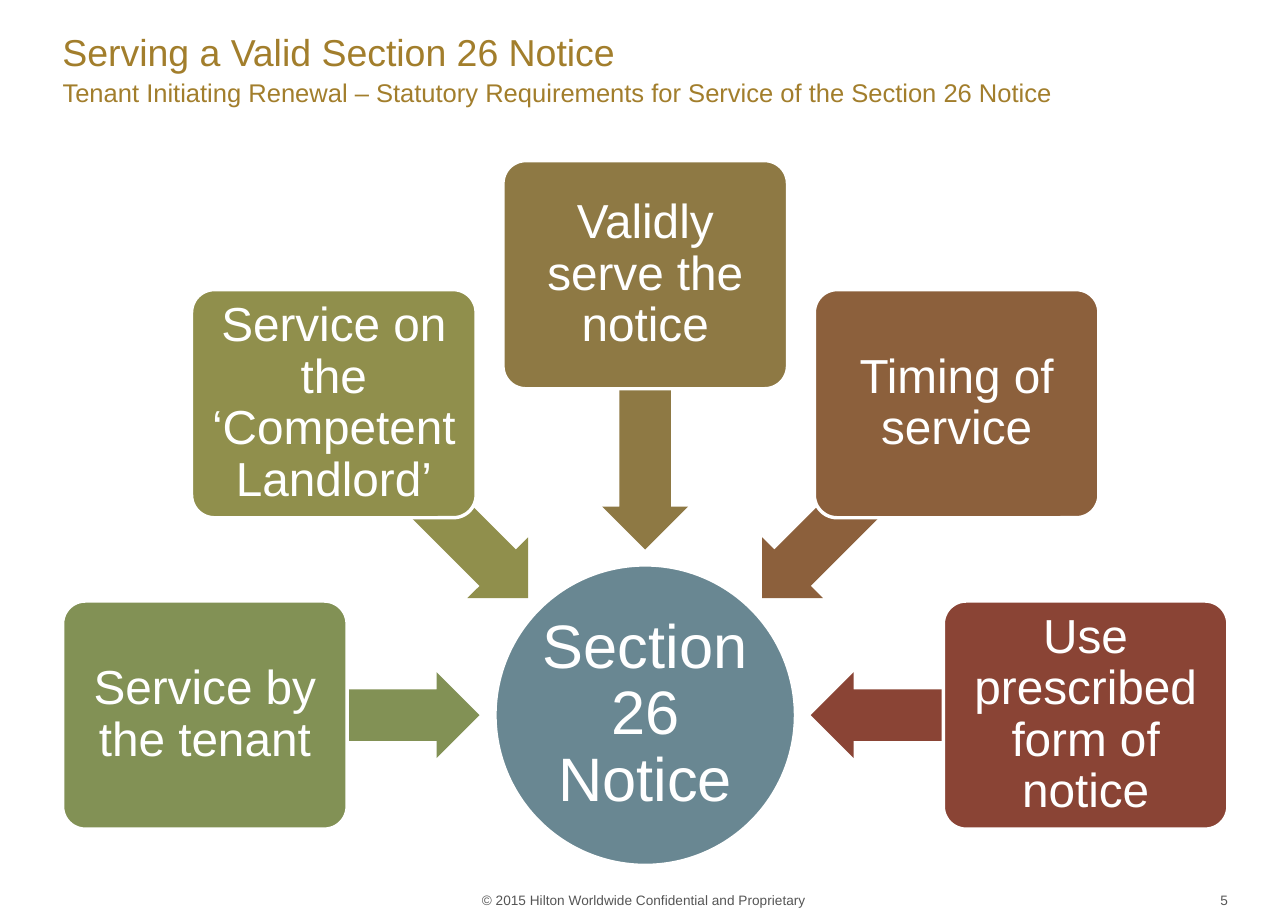
"""Build a radial slide: five requirements pointing at the Section 26 Notice."""
from math import cos, radians, sin

from pptx import Presentation
from pptx.dml.color import RGBColor
from pptx.enum.shapes import MSO_SHAPE
from pptx.enum.text import MSO_ANCHOR, PP_ALIGN
from pptx.util import Inches, Pt

ELLIPSE, CARD, ARROW = MSO_SHAPE.OVAL, MSO_SHAPE.ROUNDED_RECTANGLE, MSO_SHAPE.LEFT_ARROW
LEFT, CENTER, RIGHT = PP_ALIGN.LEFT, PP_ALIGN.CENTER, PP_ALIGN.RIGHT
TOP, MIDDLE, BOTTOM = MSO_ANCHOR.TOP, MSO_ANCHOR.MIDDLE, MSO_ANCHOR.BOTTOM

COLORS = {
    "gold": "A27E2C", "grey": "555555", "white": "FFFFFF", "hub": "698792",
    "green": "829155", "olive": "908F4C", "bronze": "8E7944",
    "brown": "8C603C", "red": "8A4435",
}
FONT = "Arial"

TITLE = "Serving a Valid Section 26 Notice"
SUBTITLE = "Tenant Initiating Renewal – Statutory Requirements for Service of the Section 26 Notice"
FOOTER = "© 2015 Hilton Worldwide Confidential and Proprietary"
PAGE_NUMBER = "5"
HUB = "Section 26 Notice"
REQUIREMENTS = [
    ("Service by the tenant", "green"),
    ("Service on the ‘Competent Landlord’", "olive"),
    ("Validly serve the notice", "bronze"),
    ("Timing of service", "brown"),
    ("Use prescribed form of notice", "red"),
]

SLIDE_SIZE = (10.5, 7.5)
MARGIN = 0.51
HUB_CENTER = (5.26, 5.83)
HUB_SIZE = (2.45, 2.45)
CARD_SIZE = (2.32, 1.86)
ARROW_SIZE = (2.24, 0.7)
CARD_RADIUS = 3.59
ARROW_RADIUS = 2.47
START_ANGLE = 180
ANGLE_STEP = 180 / (len(REQUIREMENTS) - 1)


def write(shape, text, size, color, align, anchor, insets):
    """Put one styled run into a shape and return its paragraph."""
    frame = shape.text_frame
    frame.word_wrap = True
    frame.vertical_anchor = anchor
    frame.margin_left, frame.margin_top, frame.margin_right, frame.margin_bottom = map(Inches, insets)
    paragraph = frame.paragraphs[0]
    paragraph.alignment = align
    run = paragraph.add_run()
    run.text = text
    run.font.name = FONT
    run.font.size = Pt(size)
    run.font.color.rgb = RGBColor.from_string(COLORS[color])
    return paragraph


def add_label(slide, box, text, size, color, align, anchor, insets):
    """Add a text box and return its paragraph."""
    shape = slide.shapes.add_textbox(*map(Inches, box))
    return write(shape, text, size, color, align, anchor, insets)


def add_centered(slide, kind, center, size, color, outlined):
    """Add a filled shape around a centre point."""
    left, top = (middle - length / 2 for middle, length in zip(center, size))
    shape = slide.shapes.add_shape(kind, *map(Inches, (left, top, *size)))
    shape.shadow.inherit = False
    shape.fill.solid()
    shape.fill.fore_color.rgb = RGBColor.from_string(COLORS[color])
    if outlined:
        shape.line.color.rgb = RGBColor.from_string(COLORS["white"])
        shape.line.width = Pt(2)
    else:
        shape.line.fill.background()
    return shape


def around_hub(radius, angle):
    """Return the point at a radius and clockwise angle from the hub."""
    x, y = HUB_CENTER
    return x + radius * cos(radians(angle)), y + radius * sin(radians(angle))


def write_node(shape, text, size, inset):
    """Write the centred white text of a diagram node."""
    paragraph = write(shape, text, size, "white", CENTER, MIDDLE, (inset,) * 4)
    paragraph.line_spacing = 0.9


def main():
    """Assemble and save the slide."""
    presentation = Presentation()
    presentation.slide_width, presentation.slide_height = map(Inches, SLIDE_SIZE)
    slide = presentation.slides.add_slide(presentation.slide_layouts[6])

    heading_insets = (0, 0.05, 0.1, 0.05)
    title = add_label(slide, (MARGIN, 0.05, 7.67, 0.74), TITLE, 22, "gold", LEFT, MIDDLE, heading_insets)
    title.line_spacing = Pt(26.7)
    add_label(slide, (MARGIN, 0.58, 8.49, 0.35), SUBTITLE, 15, "gold", LEFT, TOP, heading_insets)

    hub = add_centered(slide, ELLIPSE, HUB_CENTER, HUB_SIZE, "hub", True)
    write_node(hub, HUB, 36, 0.03)

    for index, (text, color) in enumerate(REQUIREMENTS):
        angle = START_ANGLE + index * ANGLE_STEP
        arrow = add_centered(slide, ARROW, around_hub(ARROW_RADIUS, angle), ARROW_SIZE, color, False)
        arrow.rotation = angle % 360
        arrow.adjustments[0] = 0.6
        arrow.adjustments[1] = 0.5
        card = add_centered(slide, CARD, around_hub(CARD_RADIUS, angle), CARD_SIZE, color, True)
        card.adjustments[0] = 0.1
        write_node(card, text, 28, 0.06)

    add_label(slide, (3.75, 7.21, 3, 0.24), FOOTER, 8, "grey", CENTER, BOTTOM, (0.1, 0.05, 0.1, 0.05))
    add_label(slide, (7.56, 7.14, 2.45, 0.4), PAGE_NUMBER, 8, "grey", RIGHT, MIDDLE, (0, 0.05, 0, 0.05))

    presentation.save("out.pptx")


if __name__ == "__main__":
    main()
